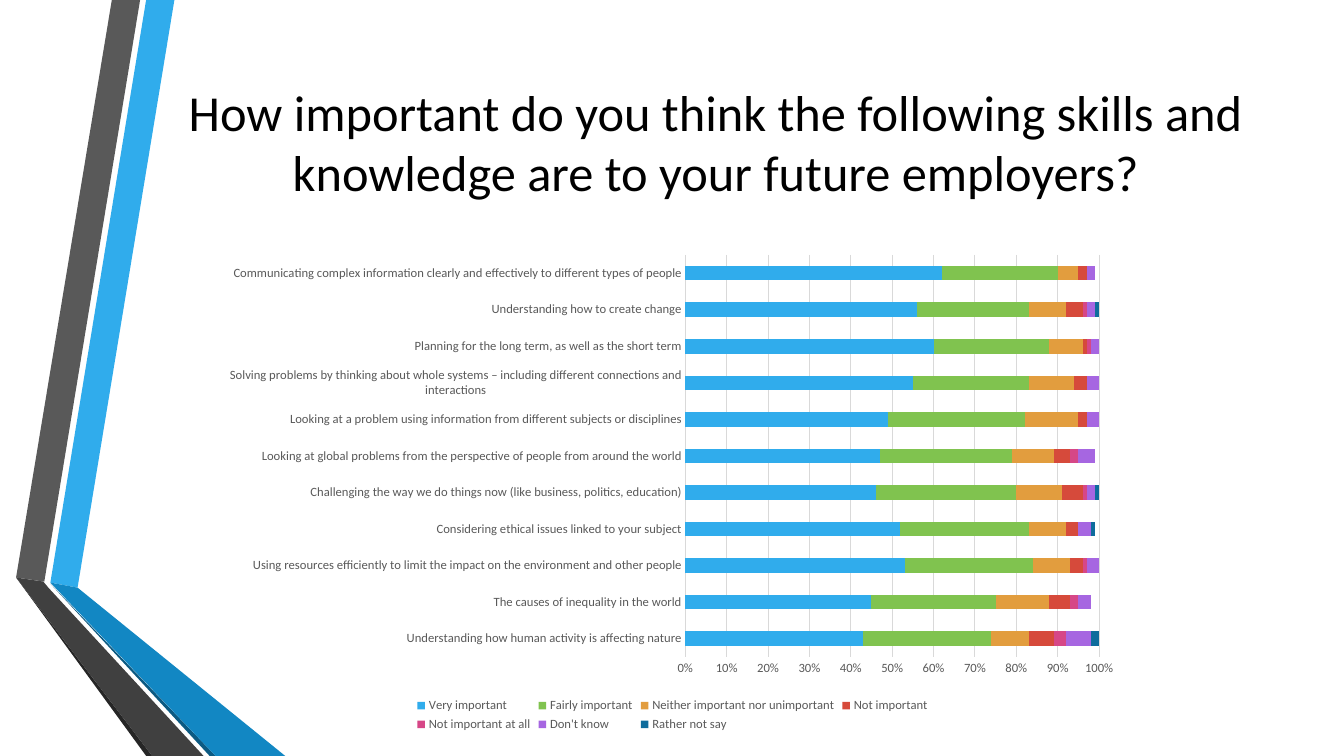
from lxml import etree
from pptx import Presentation
from pptx.chart.data import CategoryChartData
from pptx.dml.color import RGBColor
from pptx.enum import chart as ch, text
from pptx.oxml import parse_xml
from pptx.util import Inches, Pt

FONT = "Calibri"
BLACK = RGBColor(0x00, 0x00, 0x00)
LABEL_GREY = RGBColor(0x59, 0x59, 0x59)
GRID_GREY = RGBColor(0xD9, 0xD9, 0xD9)
CHART_NS = "http://schemas.openxmlformats.org/drawingml/2006/chart"

TITLE = ("How important do you think the following skills and "
         "knowledge are to your future employers?")

# Folded ribbon at the left edge: colour and corner points in inches
RIBBON = [
    (RGBColor(0x30, 0xAC, 0xEC), [(0.5, 5.78), (0.77, 5.83), (1.73, 0), (1.45, 0)]),
    (RGBColor(0x59, 0x59, 0x59), [(1.39, 0), (1.11, 0), (0.16, 5.73), (0.44, 5.77)]),
    (RGBColor(0x26, 0x26, 0x26), [(0.16, 5.73), (1.45, 7.5), (1.51, 7.5)]),
    (RGBColor(0x0C, 0x5A, 0x82), [(0.5, 5.79), (2.08, 7.5), (2.14, 7.5)]),
    (RGBColor(0x12, 0x87, 0xC3), [(0.5, 5.78), (2.14, 7.5), (2.83, 7.5), (0.77, 5.83)]),
    (RGBColor(0x40, 0x40, 0x40),
     [(2.02, 7.5), (0.48, 5.83), (0.43, 5.77), (0.16, 5.73), (1.51, 7.5)]),
]

SKILLS = [
    "Understanding how human activity is affecting nature",
    "The causes of inequality in the world",
    "Using resources efficiently to limit the impact on the environment and other people",
    "Considering ethical issues linked to your subject",
    "Challenging the way we do things now (like business, politics, education)",
    "Looking at global problems from the perspective of people from around the world",
    "Looking at a problem using information from different subjects or disciplines",
    "Solving problems by thinking about whole systems – including different connections "
    "and interactions",
    "Planning for the long term, as well as the short term",
    "Understanding how to create change",
    "Communicating complex information clearly and effectively to different types of people",
]

ANSWERS = [
    ("Very important", RGBColor(0x30, 0xAC, 0xEC),
     [0.43, 0.45, 0.53, 0.52, 0.46, 0.47, 0.49, 0.55, 0.6, 0.56, 0.62]),
    ("Fairly important", RGBColor(0x80, 0xC3, 0x4F),
     [0.31, 0.3, 0.31, 0.31, 0.34, 0.32, 0.33, 0.28, 0.28, 0.27, 0.28]),
    ("Neither important nor unimportant", RGBColor(0xE2, 0x9D, 0x3E),
     [0.09, 0.13, 0.09, 0.09, 0.11, 0.1, 0.13, 0.11, 0.08, 0.09, 0.05]),
    ("Not important", RGBColor(0xD6, 0x4A, 0x3B),
     [0.06, 0.05, 0.03, 0.03, 0.05, 0.04, 0.02, 0.03, 0.01, 0.04, 0.02]),
    ("Not important at all", RGBColor(0xD6, 0x47, 0x87),
     [0.03, 0.02, 0.01, 0, 0.01, 0.02, 0, 0, 0.01, 0.01, 0]),
    ("Don't know", RGBColor(0xA6, 0x66, 0xE1),
     [0.06, 0.03, 0.03, 0.03, 0.02, 0.04, 0.03, 0.03, 0.02, 0.02, 0.02]),
    ("Rather not say", RGBColor(0x0E, 0x6C, 0x9C),
     [0.02, 0, 0, 0.01, 0.01, 0, 0, 0, 0, 0.01, 0]),
]


def style_font(font, size, color):
    font.name = FONT
    font.size = Pt(size)
    font.bold = False
    font.color.rgb = color


def style_line(line, color):
    line.color.rgb = color
    line.width = Pt(0.75)


def write_text(tf, content, size=18, color=BLACK, align=text.PP_ALIGN.LEFT,
               anchor=text.MSO_ANCHOR.TOP):
    tf.word_wrap = True
    tf.auto_size = text.MSO_AUTO_SIZE.NONE
    tf.vertical_anchor = anchor
    p = tf.paragraphs[0]
    p.alignment = align
    r = p.add_run()
    r.text = content
    style_font(r.font, size, color)


def add_band(s, color, points):
    corners = [(Inches(x), Inches(y)) for x, y in points]
    builder = s.shapes.build_freeform(*corners[0])
    builder.add_line_segments(corners[1:], close=True)
    sp = builder.convert_to_shape()
    sp.shadow.inherit = False
    sp.fill.solid()
    sp.fill.fore_color.rgb = color
    sp.line.fill.background()


def add_title(s):
    sp = s.shapes.title
    sp.left, sp.top = Inches(1.62), Inches(0.75)
    sp.width, sp.height = Inches(10.96), Inches(1.92)
    write_text(sp.text_frame, TITLE, size=36, align=text.PP_ALIGN.CENTER)


def place_plot(chart, x, y, w, h):
    """Fix the inner plot area, in fractions of the chart frame."""
    plot_area = chart.plots[0]._element.getparent()
    for old in plot_area.findall(f"{{{CHART_NS}}}layout"):
        plot_area.remove(old)
    layout = parse_xml(f'<c:layout xmlns:c="{CHART_NS}"><c:manualLayout/></c:layout>')
    settings = [("layoutTarget", "inner"), ("xMode", "edge"), ("yMode", "edge"),
                ("x", x), ("y", y), ("w", w), ("h", h)]
    for tag, val in settings:
        etree.SubElement(layout[0], f"{{{CHART_NS}}}{tag}").set("val", str(val))
    plot_area.insert(0, layout)


def style_axis(axis):
    axis.major_tick_mark = axis.minor_tick_mark = ch.XL_TICK_MARK.NONE
    style_font(axis.tick_labels.font, 9, LABEL_GREY)


def add_skills_chart(s):
    data = CategoryChartData(number_format="0%")
    data.categories = SKILLS
    for name, _, values in ANSWERS:
        data.add_series(name, values)
    chart = s.shapes.add_chart(ch.XL_CHART_TYPE.BAR_STACKED, Inches(2.11), Inches(1.91),
                               Inches(9.12), Inches(5.39), data).chart
    style_font(chart.font, 10, BLACK)
    chart.has_title = False
    plot = chart.plots[0]
    plot.gap_width, plot.overlap, plot.vary_by_categories = 150, 100, False
    for series, (_, color, _) in zip(plot.series, ANSWERS):
        series.format.fill.solid()
        series.format.fill.fore_color.rgb = color

    skills, share = chart.category_axis, chart.value_axis
    style_axis(skills)
    style_line(skills.format.line, GRID_GREY)
    style_axis(share)
    share.format.line.fill.background()
    share.minimum_scale, share.maximum_scale, share.major_unit = 0, 1, 0.1
    share.tick_labels.number_format = "0%"
    share.tick_labels.number_format_is_linked = False
    share.has_major_gridlines = True
    style_line(share.major_gridlines.format.line, GRID_GREY)

    chart.has_legend = True
    chart.legend.position = ch.XL_LEGEND_POSITION.BOTTOM
    chart.legend.include_in_layout = False
    style_font(chart.legend.font, 9, LABEL_GREY)
    place_plot(chart, 0.514, 0.115, 0.45, 0.74)


def main():
    prs = Presentation()
    prs.slide_width, prs.slide_height = Inches(13.33), Inches(7.5)
    s = prs.slides.add_slide(prs.slide_layouts[5])
    for color, points in RIBBON:
        add_band(s, color, points)
    add_title(s)
    add_skills_chart(s)
    prs.save("out.pptx")


if __name__ == "__main__":
    main()
